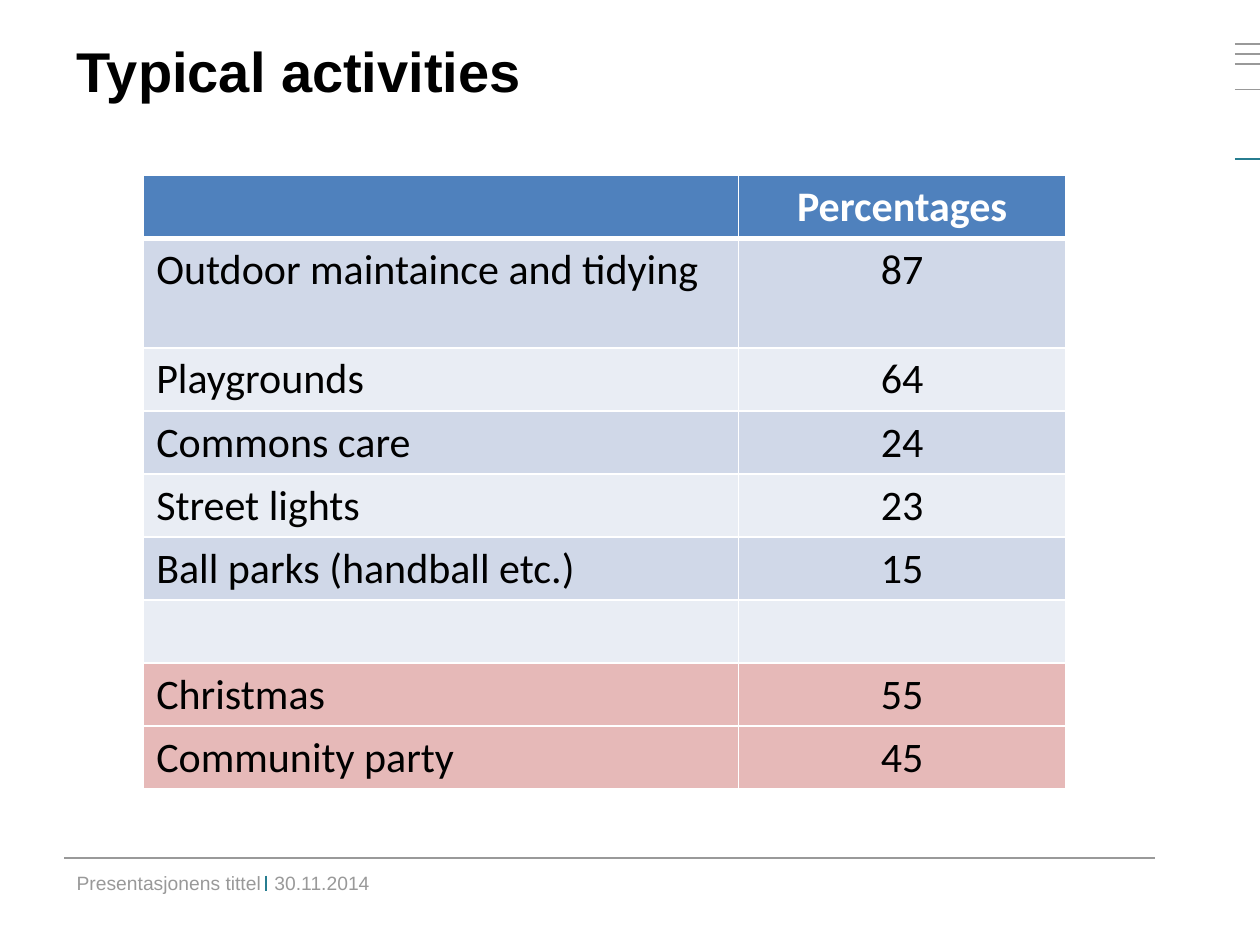
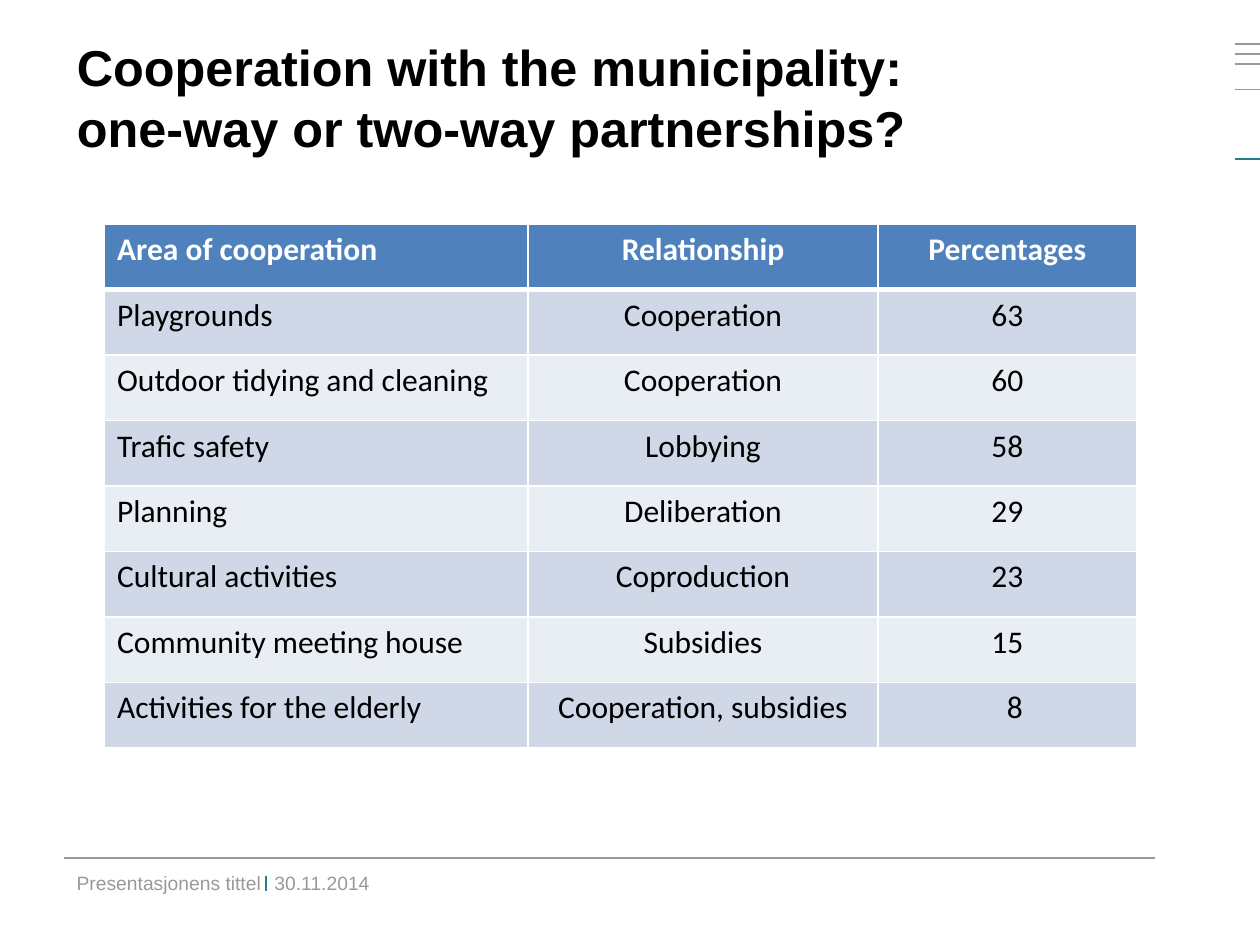
from lxml import etree
from pptx import Presentation
from pptx.dml.color import RGBColor
from pptx.enum.shapes import MSO_CONNECTOR
from pptx.enum.text import MSO_ANCHOR, MSO_AUTO_SIZE, PP_ALIGN
from pptx.oxml.ns import qn
from pptx.util import Inches, Pt

LEFT, CENTER = PP_ALIGN.LEFT, PP_ALIGN.CENTER
TOP, MIDDLE = MSO_ANCHOR.TOP, MSO_ANCHOR.MIDDLE
STRAIGHT = MSO_CONNECTOR.STRAIGHT
NO_AUTOFIT = MSO_AUTO_SIZE.NONE

BLACK = RGBColor(0x00, 0x00, 0x00)
WHITE = RGBColor(0xFF, 0xFF, 0xFF)
GRAY = RGBColor(0x99, 0x99, 0x99)
TEAL = RGBColor(0x27, 0x7D, 0x90)
BLUE = RGBColor(0x4F, 0x81, 0xBD)
BAND_DARK = RGBColor(0xD0, 0xD8, 0xE8)
BAND_LIGHT = RGBColor(0xE9, 0xED, 0xF4)
PINK = RGBColor(0xE6, 0xB9, 0xB8)

TITLE_FONT, TABLE_FONT = "Arial", "Calibri"
MARGIN, CONTENT_W = 0.51, 8.66
FOOTER_Y = 6.81

ACTIVITIES = [
    ("", "Percentages"),
    ("Outdoor maintaince and tidying", "87"),
    ("Playgrounds", "64"),
    ("Commons care", "24"),
    ("Street lights", "23"),
    ("Ball parks (handball etc.)", "15"),
    ("", ""),
    ("Christmas", "55"),
    ("Community party", "45"),
]
COOPERATION = [
    ("Area of cooperation", "Relationship", "Percentages"),
    ("Playgrounds", "Cooperation", "63"),
    ("Outdoor tidying and cleaning", "Cooperation", "60"),
    ("Trafic safety", "Lobbying", "58"),
    ("Planning", "Deliberation", "29"),
    ("Cultural activities", "Coproduction", "23"),
    ("Community meeting house", "Subsidies", "15"),
    ("Activities for the elderly", "Cooperation, subsidies", "8"),
]


def write(tf, text, size, font=TITLE_FONT, color=BLACK, bold=False, align=LEFT):
    p = tf.paragraphs[0]
    p.text = text
    p.alignment = align
    for r in p.runs:
        r.font.name = font
        r.font.size = Pt(size)
        r.font.bold = bold
        r.font.color.rgb = color
    return p


def add_line(s, x1, y1, x2, y2, color=GRAY):
    line = s.shapes.add_connector(
        STRAIGHT, Inches(x1), Inches(y1), Inches(x2), Inches(y2))
    line.line.color.rgb = color
    line.line.width = Pt(1)
    etree.SubElement(line._element.spPr, qn("a:effectLst"))


def add_title(s, text, size):
    title = s.shapes.title
    title.left, title.top = Inches(MARGIN), Inches(0.24)
    title.width, title.height = Inches(CONTENT_W), Inches(1.02)
    tf = title.text_frame
    tf.auto_size = NO_AUTOFIT
    tf.vertical_anchor = TOP
    write(tf, text, size, bold=True)


def add_footer(s):
    add_line(s, MARGIN, FOOTER_Y, MARGIN + CONTENT_W, FOOTER_Y)
    add_line(s, 2.11, 6.95, 2.11, 7.07, TEAL)
    box = s.shapes.add_textbox(
        Inches(MARGIN), Inches(FOOTER_Y), Inches(4.5), Inches(0.4))
    tf = box.text_frame
    tf.word_wrap = True
    tf.vertical_anchor = MIDDLE
    p = write(tf, "Presentasjonens tittel\t30.11.2014", 11, color=GRAY)
    tabs = etree.SubElement(p._p.get_or_add_pPr(), qn("a:tabLst"))
    etree.SubElement(tabs, qn("a:tab"), pos=str(Inches(1.57)), algn="l")


def add_edge_marks(s):
    for y in (0.35, 0.43, 0.51, 0.71):
        add_line(s, 9.8, y, 10, y)
    add_line(s, 9.8, 1.26, 10, 1.26, TEAL)


def set_borders(cell, top=1, bottom=1):
    """Draw white borders, with widths in points."""
    tcPr = cell._tc.get_or_add_tcPr()
    for side, width in (("L", 1), ("R", 1), ("T", top), ("B", bottom)):
        ln = etree.SubElement(tcPr, qn(f"a:ln{side}"), w=str(Pt(width)))
        fill = etree.SubElement(ln, qn("a:solidFill"))
        etree.SubElement(fill, qn("a:srgbClr"), val=str(WHITE))


def add_banded_table(s, rows, x, y, col_widths, row_heights, size, pink_rows=()):
    table = s.shapes.add_table(
        len(rows), len(col_widths), Inches(x), Inches(y),
        Inches(sum(col_widths)), Inches(sum(row_heights))).table
    for column, width in zip(table.columns, col_widths):
        column.width = Inches(width)
    for i, values in enumerate(rows):
        table.rows[i].height = Inches(row_heights[i])
        header = i == 0
        if header:
            fill = BLUE
        elif i in pink_rows:
            fill = PINK
        else:
            fill = BAND_DARK if i % 2 else BAND_LIGHT
        for j, value in enumerate(values):
            cell = table.cell(i, j)
            set_borders(cell, top=3 if i == 1 else 1, bottom=3 if header else 1)
            cell.fill.solid()
            cell.fill.fore_color.rgb = fill
            write(cell.text_frame, value, size, font=TABLE_FONT,
                  color=WHITE if header else BLACK, bold=header,
                  align=CENTER if j else LEFT)
            if len(value) == 1:  # line up single digits with the units above
                cell.margin_left = Inches(0.22)


def add_slide(prs, title, title_size):
    s = prs.slides.add_slide(prs.slide_layouts[5])
    add_edge_marks(s)
    add_title(s, title, title_size)
    add_footer(s)
    return s


def main():
    prs = Presentation()
    prs.slide_width, prs.slide_height = Inches(10), Inches(7.5)

    s = add_slide(prs, "Typical activities", 32)
    add_banded_table(s, ACTIVITIES, 1.14, 1.39, [4.72, 2.6],
                     [0.48, 0.87] + [0.5] * 7, 24, pink_rows=(7, 8))

    s = add_slide(
        prs, "Cooperation with the municipality:\vone-way or two-way partnerships?", 28.8)
    add_banded_table(s, COOPERATION, 0.83, 1.78, [3.36, 2.78, 2.05],
                     [0.52] * len(COOPERATION), 18)

    prs.save("out.pptx")


if __name__ == "__main__":
    main()
